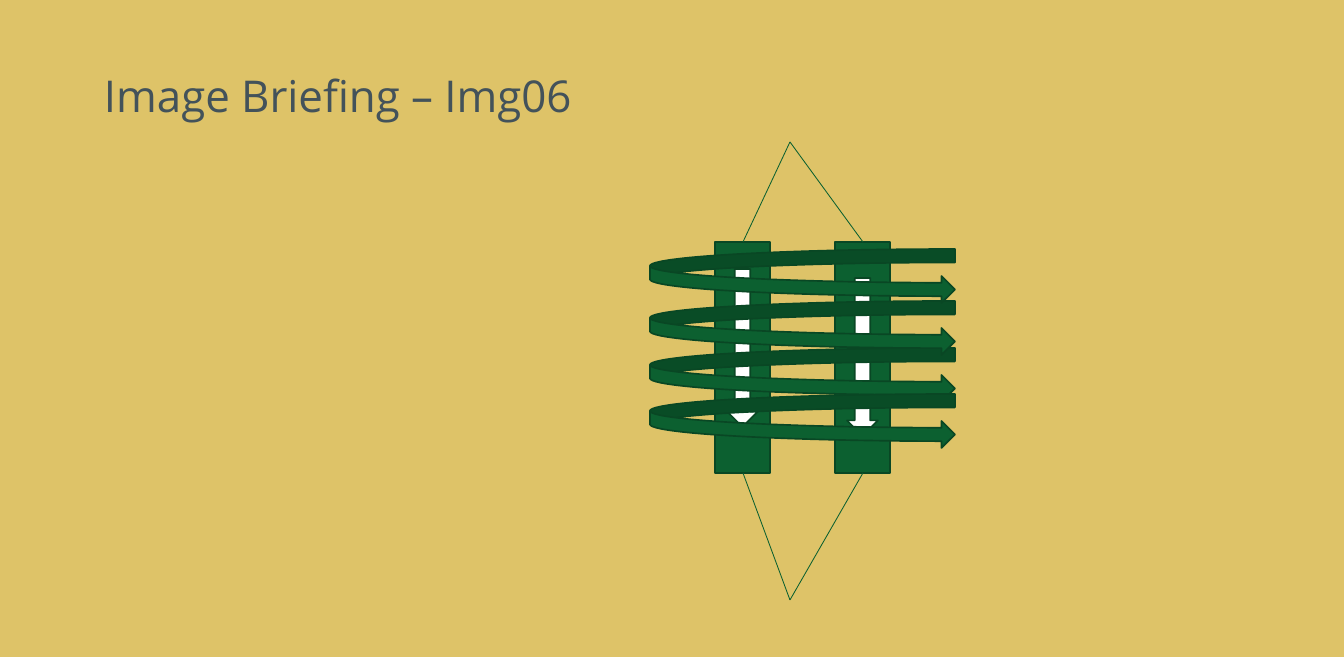
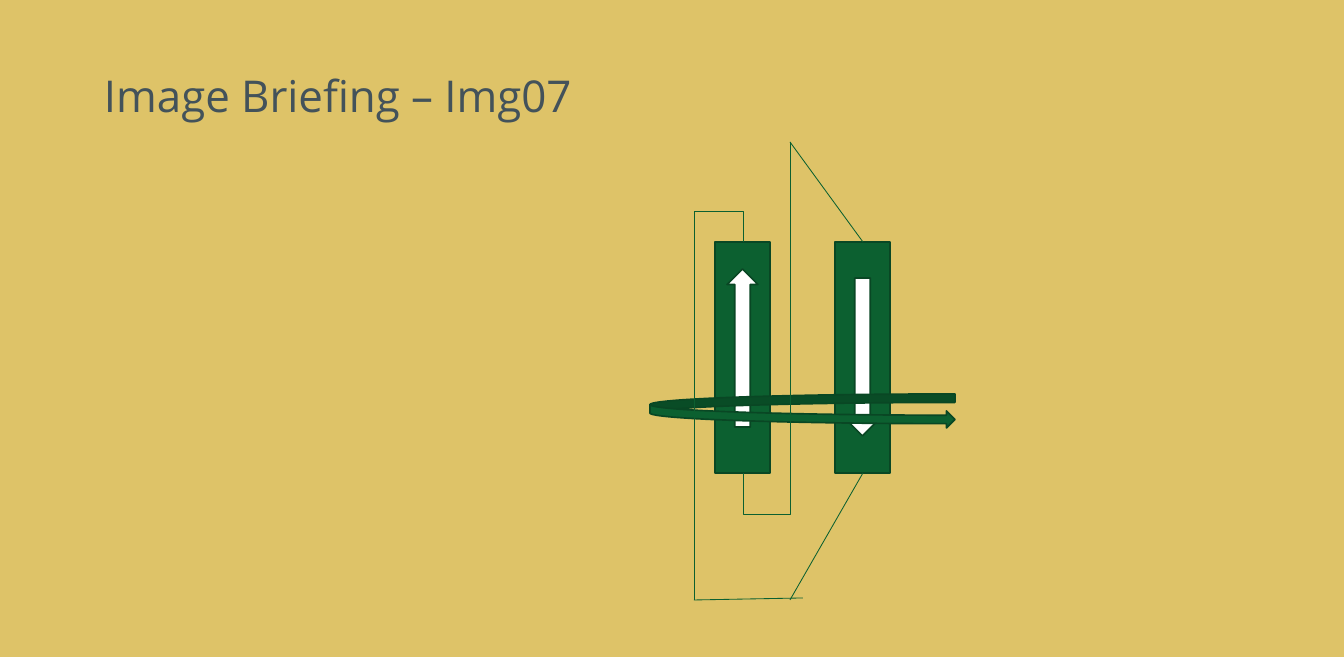
from lxml.etree import SubElement
from pptx import Presentation
from pptx.dml.color import RGBColor
from pptx.enum.shapes import MSO_CONNECTOR, MSO_SHAPE
from pptx.enum.text import MSO_ANCHOR, MSO_AUTO_SIZE, PP_ALIGN
from pptx.oxml.ns import qn
from pptx.util import Pt

PX = 7620
BACKGROUND, GREEN, DARK_GREEN = "DEC368", "0C6030", "094724"
WHITE, TITLE_COLOUR = "FFFFFF", "43525A"
PILLAR_TOP, PILLAR_BOTTOM, PILLAR_WIDTH = 242, 473, 55
LEFT_AXIS, RIGHT_AXIS = 743, 863
APEX, BASE, CORNER = (790, 142), (790, 600), (694, 600)
LEFT_TOP, LEFT_BOTTOM = (LEFT_AXIS, PILLAR_TOP), (LEFT_AXIS, PILLAR_BOTTOM)
RIGHT_TOP, RIGHT_BOTTOM = (RIGHT_AXIS, PILLAR_TOP), (RIGHT_AXIS, PILLAR_BOTTOM)
RIGHT_LINES = [(RIGHT_TOP, APEX), (BASE, RIGHT_BOTTOM)]

BRIEFINGS = [
    {
        "title": "Image Briefing – Img06",
        "lines": [(LEFT_TOP, APEX), (LEFT_BOTTOM, BASE)] + RIGHT_LINES,
        "left_rotation": 0,
        "coil_tops": [348, 301, 394, 249],
        "coil_height": 54,
        "bent_lines": [],
        "front_lines": [],
    },
    {
        "title": "Image Briefing – Img07",
        "lines": RIGHT_LINES,
        "left_rotation": 180,
        "coil_tops": [394],
        "coil_height": 34,
        "bent_lines": [(APEX, LEFT_BOTTOM, 112500), (CORNER, LEFT_TOP, 108400)],
        "front_lines": [(CORNER, (803, 598))],
    },
]


def add_filled_shape(slide, kind, left, top, width, height, fill):
    shape = slide.shapes.add_shape(kind, left * PX, top * PX, width * PX, height * PX)
    shape.shadow.inherit = False
    shape.fill.solid()
    shape.fill.fore_color.rgb = RGBColor.from_string(fill)
    shape.line.color.rgb = RGBColor.from_string(DARK_GREEN)
    shape.line.width = Pt(1)
    return shape


def add_thin_line(slide, start, end, bend=None):
    points = [(x * PX, y * PX) for x, y in (start, end)]
    kind = MSO_CONNECTOR.STRAIGHT
    if bend:
        kind = MSO_CONNECTOR.ELBOW
        centre_x, centre_y = (sum(values) // 2 for values in zip(*points))
        points = [(centre_x + y - centre_y, centre_y - x + centre_x) for x, y in points]
    connector = slide.shapes.add_connector(kind, *points[0], *points[1])
    connector.line.color.rgb = RGBColor.from_string(GREEN)
    connector.line.width = Pt(0.5)
    properties = connector._element.spPr
    SubElement(properties, qn("a:effectLst"))
    if bend:
        properties.find(qn("a:xfrm")).set("rot", "5400000")
        adjustments = properties.find(qn("a:prstGeom")).find(qn("a:avLst"))
        SubElement(adjustments, qn("a:gd"), name="adj1", fmla=f"val {bend}")


presentation = Presentation()
presentation.slide_width = 1344 * PX
presentation.slide_height = 657 * PX
master_fill = presentation.slide_master.background.fill
master_fill.solid()
master_fill.fore_color.rgb = RGBColor.from_string(BACKGROUND)

layout = presentation.slide_layouts.get_by_name("Title Only")
layout_title = layout.placeholders[0]
layout_title.left, layout_title.top = 92 * PX, 35 * PX
layout_title.width, layout_title.height = 1159 * PX, 127 * PX

for briefing in BRIEFINGS:
    slide = presentation.slides.add_slide(layout)
    text_frame = slide.shapes.title.text_frame
    text_frame.auto_size = MSO_AUTO_SIZE.NONE
    text_frame.vertical_anchor = MSO_ANCHOR.MIDDLE
    paragraph = text_frame.paragraphs[0]
    paragraph.alignment = PP_ALIGN.LEFT
    paragraph.line_spacing = 0.9
    run = paragraph.add_run()
    run.text = briefing["title"]
    run.font.name = "Open Sans"
    run.font.size = Pt(26.3)
    run.font.color.rgb = RGBColor.from_string(TITLE_COLOUR)

    for axis in (LEFT_AXIS, RIGHT_AXIS):
        add_filled_shape(slide, MSO_SHAPE.RECTANGLE, axis - 28, PILLAR_TOP,
                         PILLAR_WIDTH, PILLAR_BOTTOM - PILLAR_TOP, GREEN)
    for start, end in briefing["lines"]:
        add_thin_line(slide, start, end)
    for axis, top, rotation in ((LEFT_AXIS, 269, briefing["left_rotation"]), (RIGHT_AXIS, 278, 0)):
        arrow = add_filled_shape(slide, MSO_SHAPE.DOWN_ARROW, axis - 16, top, 31, 158, WHITE)
        arrow.rotation = rotation
    for top in briefing["coil_tops"]:
        add_filled_shape(slide, MSO_SHAPE.CURVED_RIGHT_ARROW, 650, top, 305,
                         briefing["coil_height"], GREEN)
    for start, end, bend in briefing["bent_lines"]:
        add_thin_line(slide, start, end, bend)
    for start, end in briefing["front_lines"]:
        add_thin_line(slide, start, end)

presentation.save("out.pptx")
